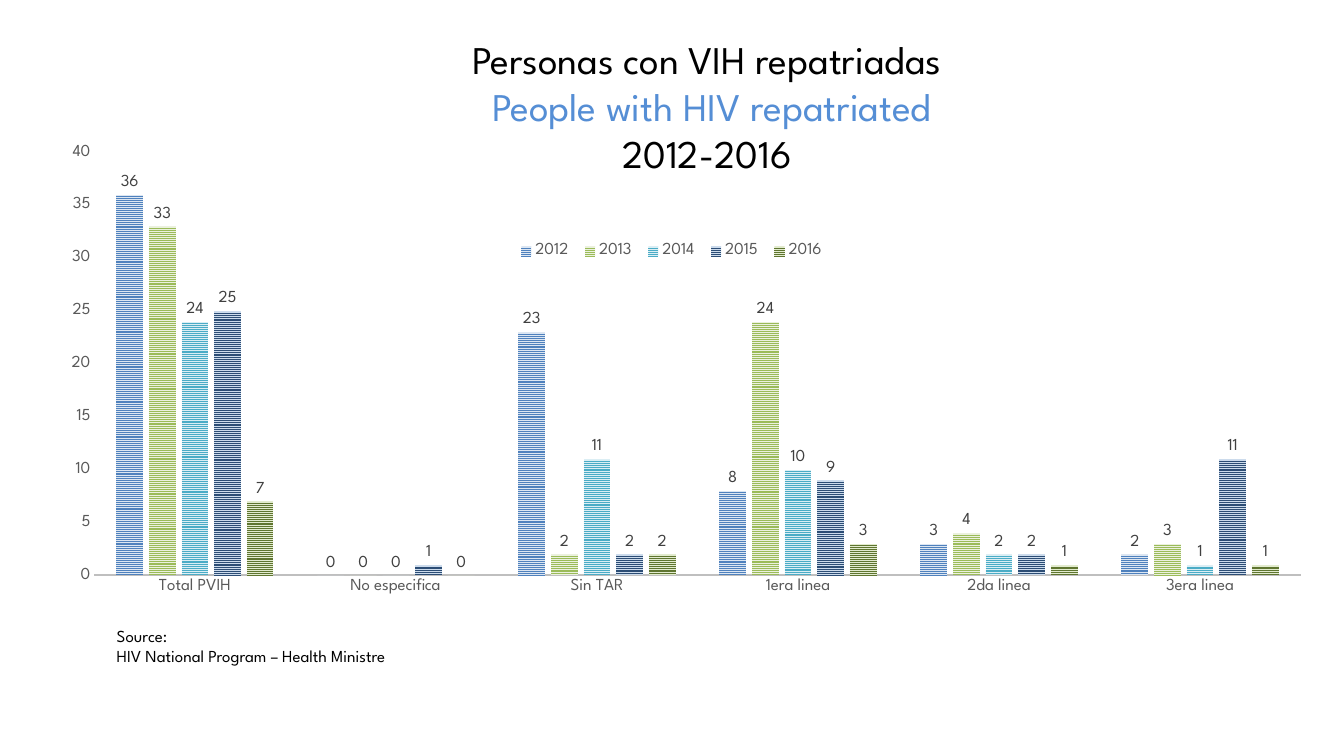
from lxml import etree
from pptx import Presentation
from pptx.chart.data import CategoryChartData
from pptx.dml.color import RGBColor
from pptx.enum.chart import XL_CHART_TYPE as ChartType
from pptx.enum.chart import XL_LABEL_POSITION as LabelPosition
from pptx.enum.chart import XL_LEGEND_POSITION as LegendPosition
from pptx.enum.chart import XL_TICK_MARK as TickMark
from pptx.enum.dml import MSO_PATTERN as Pattern
from pptx.enum.text import MSO_ANCHOR as Anchor
from pptx.enum.text import PP_ALIGN as Align
from pptx.oxml.ns import qn
from pptx.util import Inches, Pt

FONT = "League Spartan"
BLACK = RGBColor(0x00, 0x00, 0x00)
BLUE = RGBColor(0x55, 0x8E, 0xD5)
LABEL_GRAY = RGBColor(0x40, 0x40, 0x40)
AXIS_GRAY = RGBColor(0x59, 0x59, 0x59)
LINE_GRAY = RGBColor(0xBF, 0xBF, 0xBF)

REGIMENS = ["Total PVIH", "No especifica", "Sin TAR",
            "1era linea", "2da linea", "3era linea"]
# year: (people per regimen, stripe colour, colour between the stripes)
YEARS = {
    "2012": ([36, 0, 23, 8, 3, 2], RGBColor(0x4F, 0x81, 0xBD), RGBColor(0xDC, 0xE6, 0xF2)),
    "2013": ([33, 0, 2, 24, 4, 3], RGBColor(0x9B, 0xBB, 0x59), RGBColor(0xEB, 0xF1, 0xDE)),
    "2014": ([24, 0, 11, 10, 2, 1], RGBColor(0x4B, 0xAC, 0xC6), RGBColor(0xDB, 0xEE, 0xF4)),
    "2015": ([25, 1, 2, 9, 2, 11], RGBColor(0x2C, 0x4D, 0x75), RGBColor(0xCC, 0xDB, 0xEC)),
    "2016": ([7, 0, 2, 3, 1, 1], RGBColor(0x5F, 0x75, 0x30), RGBColor(0xE2, 0xEB, 0xCE)),
}


def write_lines(frame, lines, size, align=Align.LEFT, wrap=True):
    """Fill a text frame with one paragraph per (text, colour) pair."""
    frame.word_wrap = wrap
    frame.vertical_anchor = Anchor.TOP
    for number, (text, color) in enumerate(lines):
        paragraph = frame.add_paragraph() if number else frame.paragraphs[0]
        paragraph.alignment = align
        run = paragraph.add_run()
        run.text = text
        style_font(run.font, size, color)


def style_font(font, size, color):
    font.name, font.size, font.bold = FONT, Pt(size), False
    font.color.rgb = color


prs = Presentation()
prs.slide_width, prs.slide_height = Inches(13.33), Inches(7.5)
slide = prs.slides.add_slide(prs.slide_layouts[5])

# Chart
chart_data = CategoryChartData()
chart_data.categories = REGIMENS
for year, (people, stripe, ground) in YEARS.items():
    chart_data.add_series(year, people)
chart = slide.shapes.add_chart(
    ChartType.COLUMN_CLUSTERED, Inches(0.36), Inches(1.17),
    Inches(12.55), Inches(5.34), chart_data).chart
style_font(chart.font, 10, BLACK)
chart.has_title = False

columns = chart.plots[0]
columns.gap_width, columns.overlap = 164, -22
columns.vary_by_categories = False
for series, (people, stripe, ground) in zip(columns.series, YEARS.values()):
    fill = series.format.fill
    fill.patterned()
    fill.pattern = Pattern.NARROW_HORIZONTAL
    fill.fore_color.rgb, fill.back_color.rgb = stripe, ground
    series.format.line.fill.background()
    series.invert_if_negative = False
    labels = series.data_labels
    labels.show_value = True
    labels.position = LabelPosition.OUTSIDE_END
    style_font(labels.font, 12, LABEL_GRAY)

regimen_axis, people_axis = chart.category_axis, chart.value_axis
for axis in (regimen_axis, people_axis):
    axis.major_tick_mark = axis.minor_tick_mark = TickMark.NONE
    axis.has_major_gridlines = False
    style_font(axis.tick_labels.font, 12, AXIS_GRAY)
regimen_axis.format.line.color.rgb = LINE_GRAY
regimen_axis.format.line.width = Pt(1.5)
people_axis.format.line.fill.background()
people_axis.minimum_scale, people_axis.maximum_scale = 0, 40
people_axis.major_unit = 5

chart.has_legend = True
legend = chart.legend
legend.position = LegendPosition.TOP
legend.include_in_layout = False
style_font(legend.font, 12, AXIS_GRAY)

# Places of the plot and the legend, as shares of the chart
chart_space = columns.series[0]._element.getroottree().getroot()
for tag, index, target, shares in (
        ("c:plotArea", 0, "inner", (0.046, 0.064, 0.954, 0.786)),
        ("c:legend", 1, None, (0.375, 0.22, 0.255, 0.055))):
    area = next(chart_space.iter(qn(tag)))
    for old_layout in area.findall(qn("c:layout")):
        area.remove(old_layout)
    layout = etree.Element(qn("c:layout"))
    manual = etree.SubElement(layout, qn("c:manualLayout"))
    settings = [("layoutTarget", target)] if target else []
    settings += [("xMode", "edge"), ("yMode", "edge")]
    settings += zip("xywh", shares)
    for name, value in settings:
        etree.SubElement(manual, qn("c:" + name)).set("val", str(value))
    area.insert(index, layout)

# Source
source = slide.shapes.add_textbox(Inches(1.06), Inches(6.16), Inches(3.33), Inches(0.5))
write_lines(source.text_frame, [
    ("Source:", BLACK),
    ("HIV National Program – Health Ministre", BLACK),
], size=12, wrap=False)

# Title, in front of the chart
title = slide.shapes.title
title.left, title.top = Inches(2.07), Inches(0.3)
title.width, title.height = Inches(9.88), Inches(1.51)
write_lines(title.text_frame, [
    ("Personas con VIH repatriadas", BLACK),
    (" People with HIV repatriated", BLUE),
    ("2012-2016", BLACK),
], size=28, align=Align.CENTER)
title._element.getparent().append(title._element)

prs.save("out.pptx")
